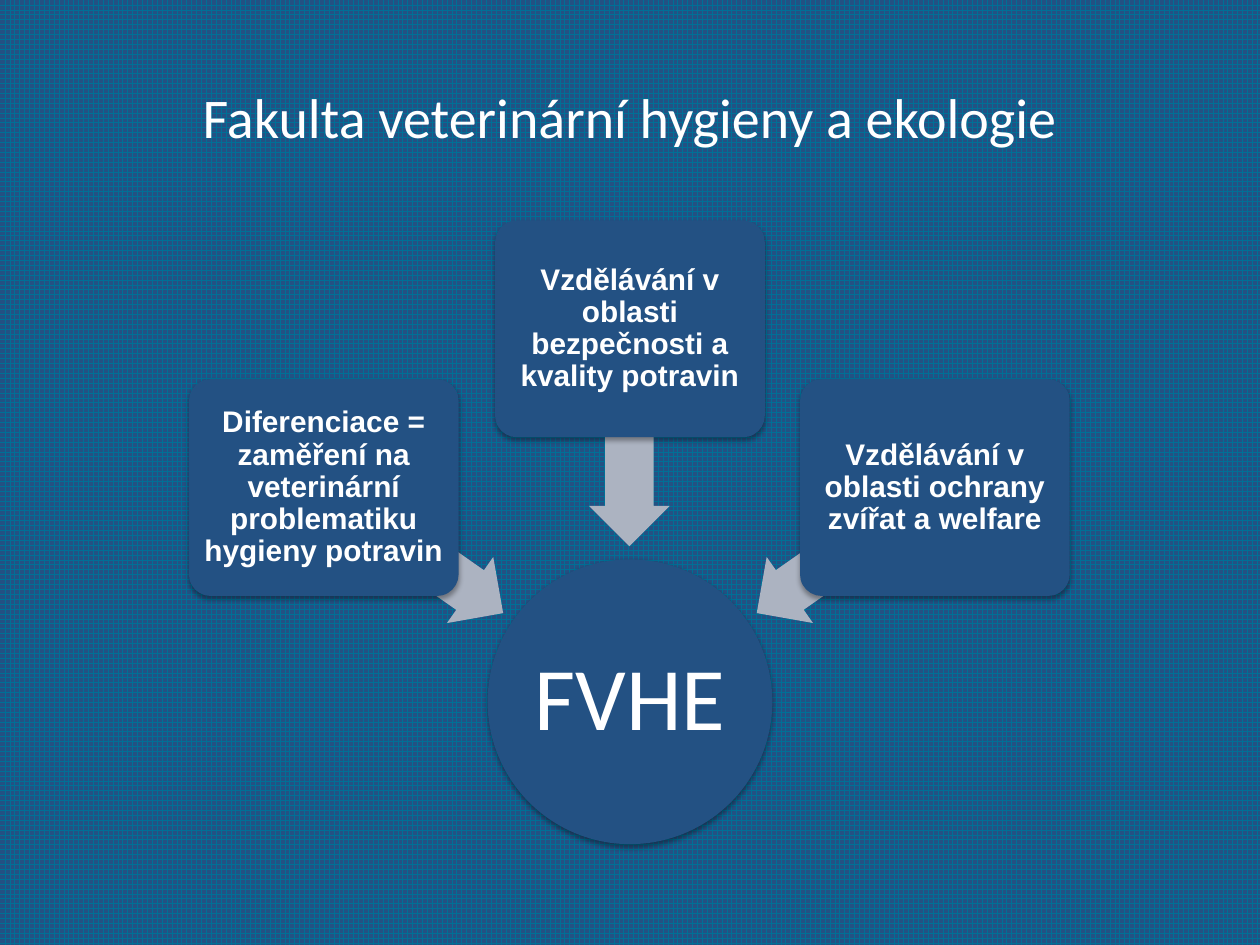
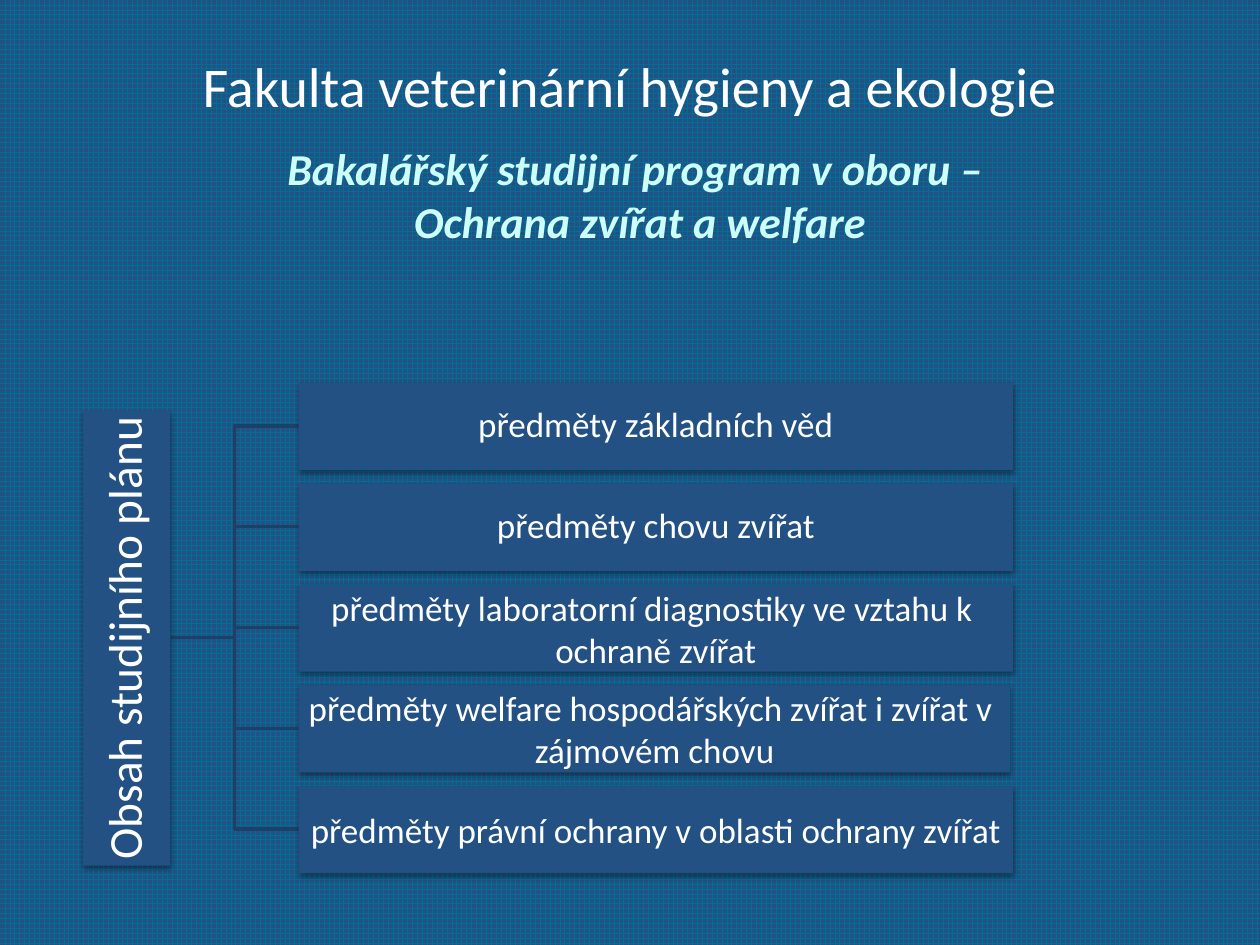
import dataclasses

import lxml.etree
import pptx
import pptx.dml.color
import pptx.enum.dml
import pptx.enum.shapes
import pptx.enum.text
import pptx.oxml.ns
import pptx.util

PX = 9144
KIND = pptx.enum.shapes.MSO_SHAPE
MID = pptx.enum.text.MSO_ANCHOR.MIDDLE
TOP = pptx.enum.text.MSO_ANCHOR.TOP


@dataclasses.dataclass(frozen=True)
class Theme:
    navy: str = "235183"
    teal: str = "006F96"
    grey: str = "ACB3C1"
    rule: str = "1C4169"
    white: str = "FFFFFF"
    mint: str = "CCFEFA"
    body: str = "Calibri"
    bold: str = "Arial"
    head: float = 32
    sub: float = 25.2
    hub: float = 51
    box: float = 17
    stem: float = 27
    row: float = 20


THEME = Theme()


def tint(code):
    return pptx.dml.color.RGBColor.from_string(code)


def write(shape, text, size, font=THEME.body, ink=THEME.white, bold=False,
          slant=False, inset=(10, 5), anchor=MID, pitch=None, before=0):
    frame = shape.text_frame
    frame.word_wrap = True
    frame.vertical_anchor = anchor
    frame.margin_left = frame.margin_right = inset[0] * PX
    frame.margin_top = frame.margin_bottom = inset[1] * PX
    frame.text = text
    for par in frame.paragraphs:
        par.alignment = pptx.enum.text.PP_ALIGN.CENTER
        par.line_spacing = pitch
        par.space_before = pptx.util.Pt(before)
        for run in par.runs:
            run.font.size = pptx.util.Pt(size)
            run.font.name = font
            run.font.bold = bold
            run.font.italic = slant
            run.font.color.rgb = tint(ink)


class Deck:
    def __init__(self, theme):
        self.theme = theme
        self.show = pptx.Presentation()
        self.show.slide_width = 1000 * PX
        self.show.slide_height = 750 * PX
        fill = self.show.slide_master.background.fill
        fill.patterned()
        fill.pattern = pptx.enum.dml.MSO_PATTERN.LARGE_GRID
        fill.fore_color.rgb = tint(theme.teal)
        fill.back_color.rgb = tint(theme.navy)

    def page(self):
        self.slide = self.show.slides.add_slide(self.show.slide_layouts[6])

    def label(self, place, text, size, **style):
        box = self.slide.shapes.add_textbox(*(n * PX for n in place))
        write(box, text, size, **style)

    def title(self, place, **style):
        self.label(place, "Fakulta veterinární hygieny a ekologie",
                   self.theme.head, **style)

    def shape(self, kind, place, fill, turn=0, adjust=()):
        item = self.slide.shapes.add_shape(kind, *(n * PX for n in place))
        item.rotation = turn
        for i, part in enumerate(adjust):
            item.adjustments[i] = part
        item.fill.solid()
        item.fill.fore_color.rgb = tint(fill)
        item.line.fill.background()
        item.shadow.inherit = False
        return item

    def card(self, kind, place, text, size, turn=0, adjust=(), dim=38,
             drop=1.6, **style):
        item = self.shape(kind, place, self.theme.navy, turn, adjust)
        name = pptx.oxml.ns.qn
        glow = item._element.spPr.find(name("a:effectLst"))
        shade = lxml.etree.SubElement(
            glow, name("a:outerShdw"), blurRad=str(pptx.util.Pt(3.1)),
            dist=str(pptx.util.Pt(drop)), dir="5400000", rotWithShape="0")
        ink = lxml.etree.SubElement(shade, name("a:srgbClr"), val="000000")
        lxml.etree.SubElement(ink, name("a:alpha"), val=str(dim * 1000))
        write(item, text, size, **style)

    def arrow(self, place, turn):
        self.shape(KIND.LEFT_ARROW, place, self.theme.grey, turn, (0.6, 0.5))

    def branch(self, start, end):
        bend = (start[0] + end[0]) // 2
        pen = self.slide.shapes.build_freeform(*start, scale=PX)
        pen.add_line_segments([(bend, start[1]), (bend, end[1]), end], close=False)
        line = pen.convert_to_shape()
        line.fill.background()
        line.line.color.rgb = tint(self.theme.rule)
        line.line.width = pptx.util.Pt(2)
        line.shadow.inherit = False


def goals(deck):
    deck.page()
    deck.title((50, 30, 900, 125))
    deck.card(KIND.OVAL, (387, 444, 226, 226), "FVHE", THEME.hub,
              inset=(4, 4), pitch=0.9)
    items = [
        ("Diferenciace = zaměření na veterinární problematiku hygieny potravin",
         (150, 301), (242, 405), 215),
        ("Vzdělávání v oblasti bezpečnosti a kvality potravin",
         (393, 175), (413, 315), 270),
        ("Vzdělávání v oblasti ochrany zvířat a welfare",
         (635, 301), (585, 405), 325),
    ]
    for text, spot, tail, turn in items:
        deck.arrow((*tail, 173, 64), turn)
        deck.card(KIND.ROUNDED_RECTANGLE, (*spot, 214, 172), text, THEME.box,
                  adjust=(0.1,), dim=35, drop=1.8, font=THEME.bold, bold=True,
                  inset=(4, 4), pitch=0.9)


def plan(deck):
    deck.page()
    deck.title((75, 36, 850, 101), anchor=TOP, before=1)
    deck.label((59, 107, 898, 94),
               "Bakalářský studijní program v oboru – \vOchrana zvířat a welfare",
               THEME.sub, ink=THEME.mint, bold=True, slant=True, before=7.5)
    rows = [
        ("předměty základních věd", 567, 0.9),
        ("předměty chovu zvířat", 567, 0.9),
        ("předměty laboratorní diagnostiky ve vztahu k \nochraně zvířat", 567, 1.0),
        ("předměty welfare hospodářských zvířat i zvířat v \nzájmovém chovu", 565, 1.0),
        ("předměty právní ochrany v oblasti ochrany zvířat", 567, 1.0),
    ]
    left, top, step, high = 237, 304, 80, 69
    for i in reversed(range(len(rows))):
        deck.branch((136, 506), (left, top + i * step + high // 2))
    deck.card(KIND.RECTANGLE, (-80, 472, 361, high), "Obsah studijního plánu",
              THEME.stem, turn=270, inset=(2, 2), pitch=0.9)
    for i, (text, wide, pitch) in enumerate(rows):
        deck.card(KIND.RECTANGLE, (left, top + i * step, wide, high), text,
                  THEME.row, inset=(1, 1), pitch=pitch)


def main():
    deck = Deck(THEME)
    goals(deck)
    plan(deck)
    deck.show.save("out.pptx")


if __name__ == "__main__":
    main()
